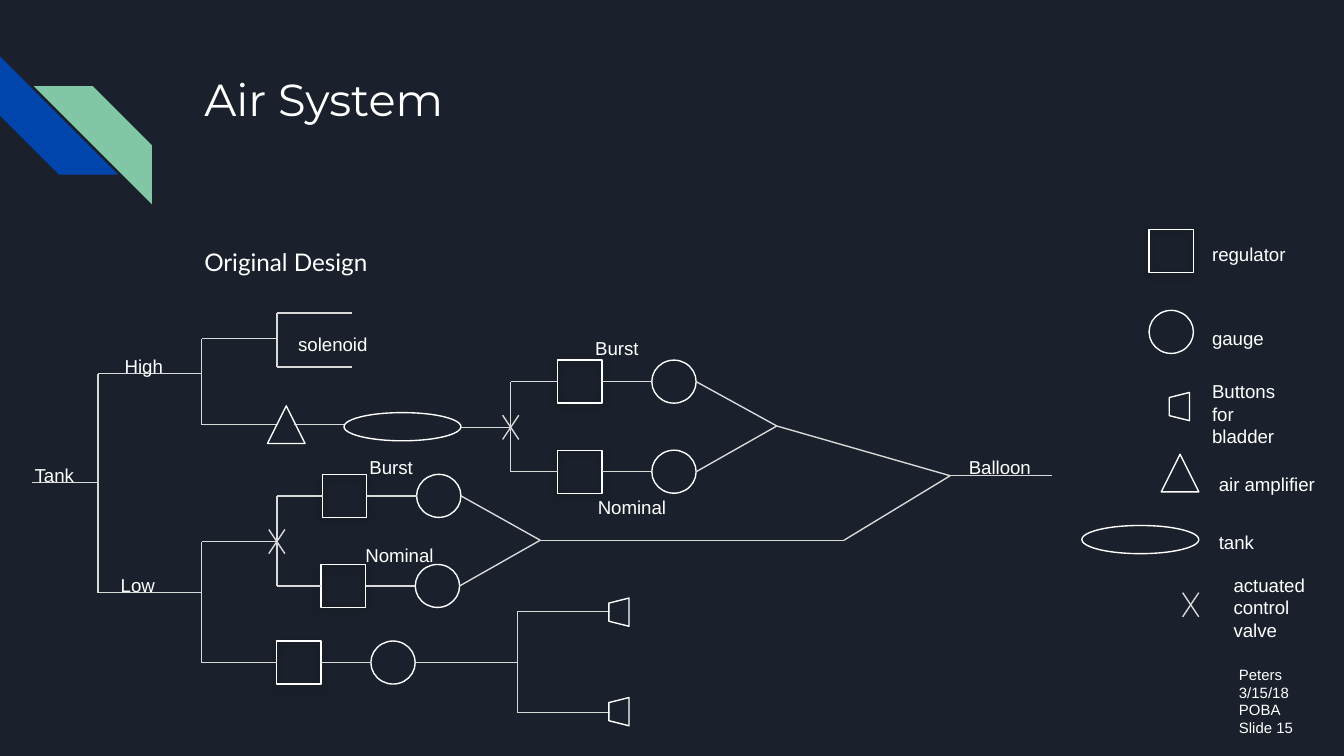
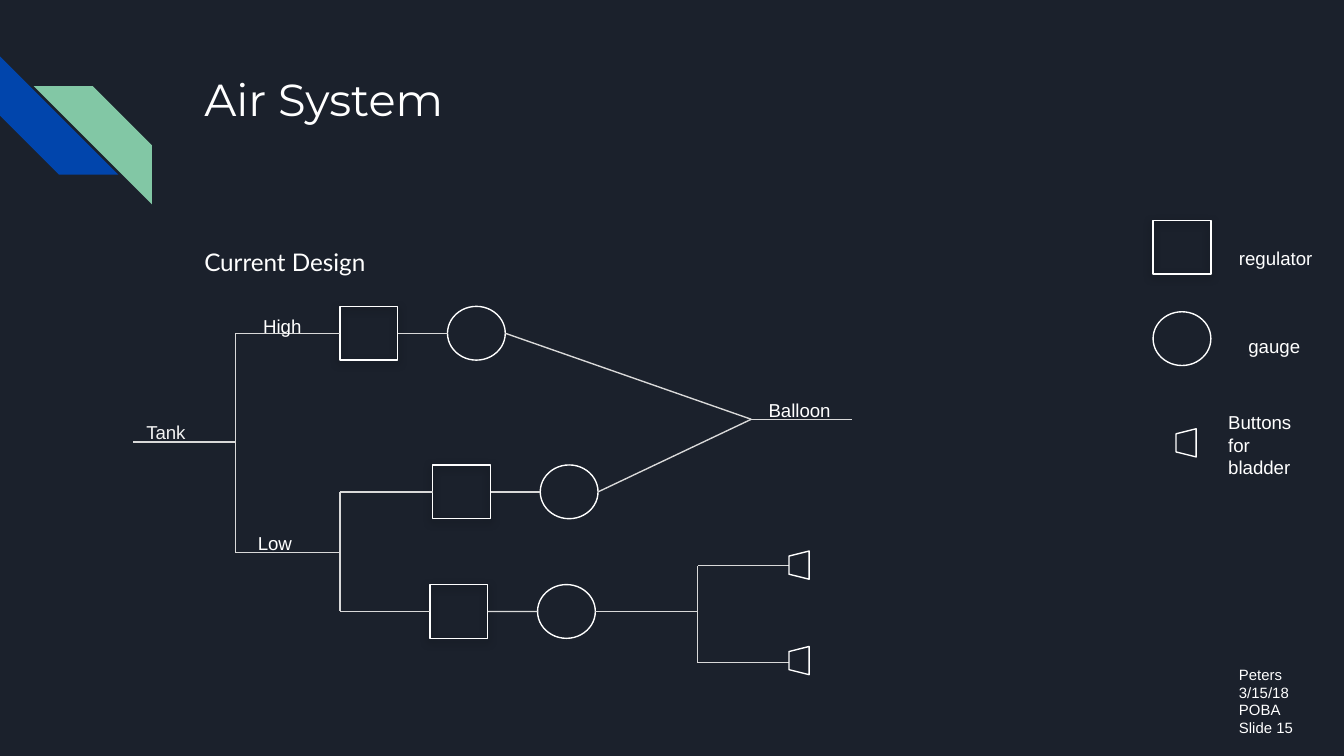
from lxml.etree import SubElement
from pptx import Presentation
from pptx.dml.color import RGBColor
from pptx.enum.shapes import MSO_CONNECTOR, MSO_SHAPE as Preset
from pptx.enum.text import MSO_ANCHOR, MSO_AUTO_SIZE, PP_ALIGN
from pptx.oxml.ns import qn
from pptx.util import Emu, Inches, Pt

NAVY = RGBColor(0x1B, 0x21, 0x2C)
BLUE = RGBColor(0x01, 0x45, 0xAC)
GREEN = RGBColor(0x82, 0xC7, 0xA5)
WHITE = RGBColor(0xFF, 0xFF, 0xFF)
OFF_WHITE = RGBColor(0xF3, 0xF3, 0xF3)
PIPE_GREY = RGBColor(0xD9, 0xD9, 0xD9)
LEFT_SIDE, RIGHT_SIDE = 1, 3
FOOTER = ("Peters", "3/15/18", "POBA", "Slide 15")


class AirDiagram:
    line_width = Pt(0.75)
    symbol_gap = 0.37

    def __init__(self):
        self.presentation = Presentation()
        self.presentation.slide_width = Inches(10)
        self.presentation.slide_height = Inches(5.625)
        fill = self.presentation.slide_master.background.fill
        fill.solid()
        fill.fore_color.rgb = NAVY

    def new_slide(self, subtitle, symbol_size):
        self.slide = self.presentation.slides.add_slide(self.presentation.slide_layouts[1])
        self.symbol_size = symbol_size
        self.stripe(0, 0.42, BLUE, 270)
        self.stripe(0.25, 0.64, GREEN, 90)
        title, body = self.slide.placeholders
        self.place(title, 1.42, 0.43, 7.7, 1)
        self.add_text(title, ["Air System"], "Montserrat", 24)
        self.place(body, 1.42, 1.71, 7.7, 0.32)
        self.add_text(body, [subtitle], "Lato", 13)
        paragraph = body.text_frame.paragraphs[0]
        paragraph.line_spacing = 1.15
        paragraph.space_before = Pt(0)
        paragraph.space_after = Pt(16)
        properties = paragraph._p.get_or_add_pPr()
        properties.set("marL", "0")
        properties.set("indent", "0")
        SubElement(properties, qn("a:buNone"))
        self.label(FOOTER, 9.12, 4.85, 0.84, 0.77, size=8)

    def place(self, shape, left, top, width, height):
        shape.left, shape.top = Inches(left), Inches(top)
        shape.width, shape.height = Inches(width), Inches(height)

    def add_text(self, shape, lines, font, size, color=WHITE):
        frame = shape.text_frame
        frame.word_wrap = True
        frame.auto_size = MSO_AUTO_SIZE.NONE
        frame.vertical_anchor = MSO_ANCHOR.TOP
        frame.margin_left = frame.margin_right = Inches(0.1)
        frame.margin_top = frame.margin_bottom = Inches(0.1)
        for index, line in enumerate(lines):
            paragraph = frame.add_paragraph() if index else frame.paragraphs[0]
            paragraph.alignment = PP_ALIGN.LEFT
            run = paragraph.add_run()
            run.text = line
            run.font.name = font
            run.font.size = Pt(size)
            run.font.color.rgb = color

    def label(self, lines, left, top, width, height=0.2, size=10, color=WHITE):
        box = self.slide.shapes.add_textbox(
            Inches(left), Inches(top), Inches(width), Inches(height))
        self.add_text(box, [lines] if isinstance(lines, str) else lines, "Arial", size, color)

    def shape(self, preset, left, top, width, height):
        shape = self.slide.shapes.add_shape(
            preset, Inches(left), Inches(top), Inches(width), Inches(height))
        shape.shadow.inherit = False
        return shape

    def stripe(self, left, top, color, rotation):
        stripe = self.shape(Preset.DIAGONAL_STRIPE, left, top, 0.88, 0.88)
        stripe.rotation = rotation
        stripe.fill.solid()
        stripe.fill.fore_color.rgb = color
        stripe.line.fill.background()

    def symbol(self, preset, left, top, width, height):
        symbol = self.shape(preset, left, top, width, height)
        symbol.fill.background()
        symbol.line.color.rgb = WHITE
        symbol.line.width = self.line_width
        return symbol

    def regulator(self, left, top):
        regulator = self.symbol(Preset.RECTANGLE, left, top, *self.symbol_size)
        effects = regulator._element.spPr.find(qn("a:effectLst"))
        shadow = SubElement(effects, qn("a:outerShdw"), blurRad=str(Pt(4.5)),
                            dist=str(Pt(1.5)), dir="5400000", rotWithShape="0")
        color = SubElement(shadow, qn("a:srgbClr"), val="000000")
        SubElement(color, qn("a:alpha"), val="50000")
        return regulator

    def gauge(self, left, top):
        return self.symbol(Preset.OVAL, left, top, *self.symbol_size)

    def button(self, left, top):
        self.symbol(Preset.TRAPEZOID, left, top, 0.21, 0.15).rotation = 270

    def amplifier(self, left, top):
        self.symbol(Preset.ISOSCELES_TRIANGLE, left, top, 0.28, 0.28)

    def tank(self, left, top):
        self.symbol(Preset.OVAL, left, top, 0.87, 0.21)

    def valve(self, x, y):
        for slope in (-1, 1):
            self.pipe((x - 0.06 * slope, y - 0.09), (x + 0.06 * slope, y + 0.09))

    def pipe(self, *ends):
        points = [end if isinstance(end, tuple) else (0, 0) for end in ends]
        pipe = self.slide.shapes.add_connector(
            MSO_CONNECTOR.STRAIGHT, *[Inches(value) for point in points for value in point])
        start, end = ends
        if not isinstance(start, tuple):
            pipe.begin_connect(start, RIGHT_SIDE)
        if not isinstance(end, tuple):
            pipe.end_connect(end, LEFT_SIDE)
        pipe.line.color.rgb = PIPE_GREY
        pipe.line.width = self.line_width
        SubElement(pipe._element.spPr, qn("a:effectLst"))

    def fork(self, x, trunk, *ends):
        for end in ends:
            if isinstance(end, tuple):
                y = end[1]
            else:
                y = Emu(end.top + end.height // 2).inches
            self.pipe((x, trunk), (x, y))
            self.pipe((x, y), end)

    def regulated_gauge(self, left, top, outlet):
        width, height = self.symbol_size
        middle = top + height / 2
        gauge_left = left + width + self.symbol_gap
        regulator = self.regulator(left, top)
        self.gauge(gauge_left, top)
        self.pipe(regulator, (gauge_left, middle))
        self.pipe((gauge_left + width, middle), outlet)
        return regulator


def build_first_design(diagram):
    diagram.new_slide("Original Design", (0.33, 0.32))

    diagram.pipe((0.24, 3.59), (0.73, 3.59))
    diagram.fork(0.73, 3.59, (1.5, 2.78), (1.5, 4.41))
    diagram.fork(1.5, 2.78, (2.06, 2.52), (2.06, 3.16))
    diagram.fork(2.06, 2.52, (2.62, 2.33), (2.62, 2.73))

    diagram.amplifier(1.99, 3.02)
    diagram.pipe((2.19, 3.16), (2.56, 3.16))
    diagram.tank(2.56, 3.07)
    diagram.pipe((3.43, 3.18), (3.8, 3.18))
    high_merge = (5.78, 3.17)
    diagram.fork(3.8, 3.18,
                 diagram.regulated_gauge(4.15, 2.68, high_merge),
                 diagram.regulated_gauge(4.15, 3.35, high_merge))
    diagram.valve(3.8, 3.18)

    low_merge = (4.02, 4.02)
    bladder = diagram.regulated_gauge(2.06, 4.77, (3.85, 4.93))
    diagram.fork(1.5, 4.41, (2.06, 4.03), bladder)
    diagram.fork(2.06, 4.03,
                 diagram.regulated_gauge(2.4, 3.53, low_merge),
                 diagram.regulated_gauge(2.39, 4.2, low_merge))
    diagram.valve(2.06, 4.03)
    diagram.fork(3.85, 4.93, (4.54, 4.55), (4.54, 5.3))
    for top in (4.48, 5.22):
        diagram.button(4.5, top)

    balloon = (7.07, 3.54)
    diagram.pipe(low_merge, (6.28, 4.02))
    diagram.pipe((6.28, 4.02), balloon)
    diagram.pipe(high_merge, balloon)
    diagram.pipe(balloon, (7.83, 3.54))

    for text, left, top, width in (
            ("High", 0.83, 2.54, 0.56), ("Low", 0.8, 4.17, 0.56),
            ("solenoid", 2.12, 2.38, 0.99), ("Balloon", 7.11, 3.29, 0.68),
            ("Tank", 0.16, 3.35, 0.56), ("Nominal", 2.62, 3.95, 0.78),
            ("Burst", 2.65, 3.29, 0.68), ("Nominal", 4.35, 3.59, 0.76),
            ("Burst", 4.33, 2.41, 0.68),
            ("regulator", 8.92, 1.71, 0.99), ("gauge", 8.92, 2.33, 0.99),
            ("Buttons for bladder", 8.92, 2.73, 0.78),
            ("air amplifier", 8.97, 3.42, 0.99), ("tank", 8.97, 3.85, 0.99),
            ("actuated control valve", 9.08, 4.17, 0.76)):
        diagram.label(text, left, top, width)
    diagram.regulator(8.55, 1.71)
    diagram.gauge(8.55, 2.31)
    diagram.button(8.67, 2.95)
    diagram.amplifier(8.64, 3.38)
    diagram.tank(8.05, 3.91)
    diagram.valve(8.86, 4.5)


def build_current_design(diagram):
    diagram.new_slide("Current Design", (0.43, 0.4))

    balloon = (5.59, 3.12)
    high = diagram.regulated_gauge(2.53, 2.28, balloon)
    diagram.pipe((0.99, 3.29), (1.75, 3.29))
    diagram.fork(1.75, 3.29, high, (2.53, 4.11))
    diagram.fork(2.53, 4.11,
                 diagram.regulated_gauge(3.22, 3.46, balloon),
                 diagram.regulated_gauge(3.2, 4.35, (5.19, 4.55)))
    diagram.pipe(balloon, (6.34, 3.12))
    diagram.fork(5.19, 4.55, (5.87, 4.21), (5.87, 4.93))
    for top in (4.13, 4.84):
        diagram.button(5.84, top)

    diagram.label("Tank", 0.99, 3.03, 0.64, color=OFF_WHITE)
    for text, left, top, width in (
            ("Balloon", 5.62, 2.87, 0.68), ("Low", 1.82, 3.86, 0.56),
            ("High", 1.86, 2.24, 0.56), ("regulator", 9.12, 1.74, 0.76),
            ("gauge", 9.19, 2.39, 0.68), ("Buttons for bladder", 9.04, 2.96, 0.78)):
        diagram.label(text, left, top, width)
    diagram.regulator(8.58, 1.64)
    diagram.gauge(8.58, 2.32)
    diagram.button(8.72, 3.22)


def main():
    diagram = AirDiagram()
    build_first_design(diagram)
    build_current_design(diagram)
    diagram.presentation.save("out.pptx")


if __name__ == "__main__":
    main()
